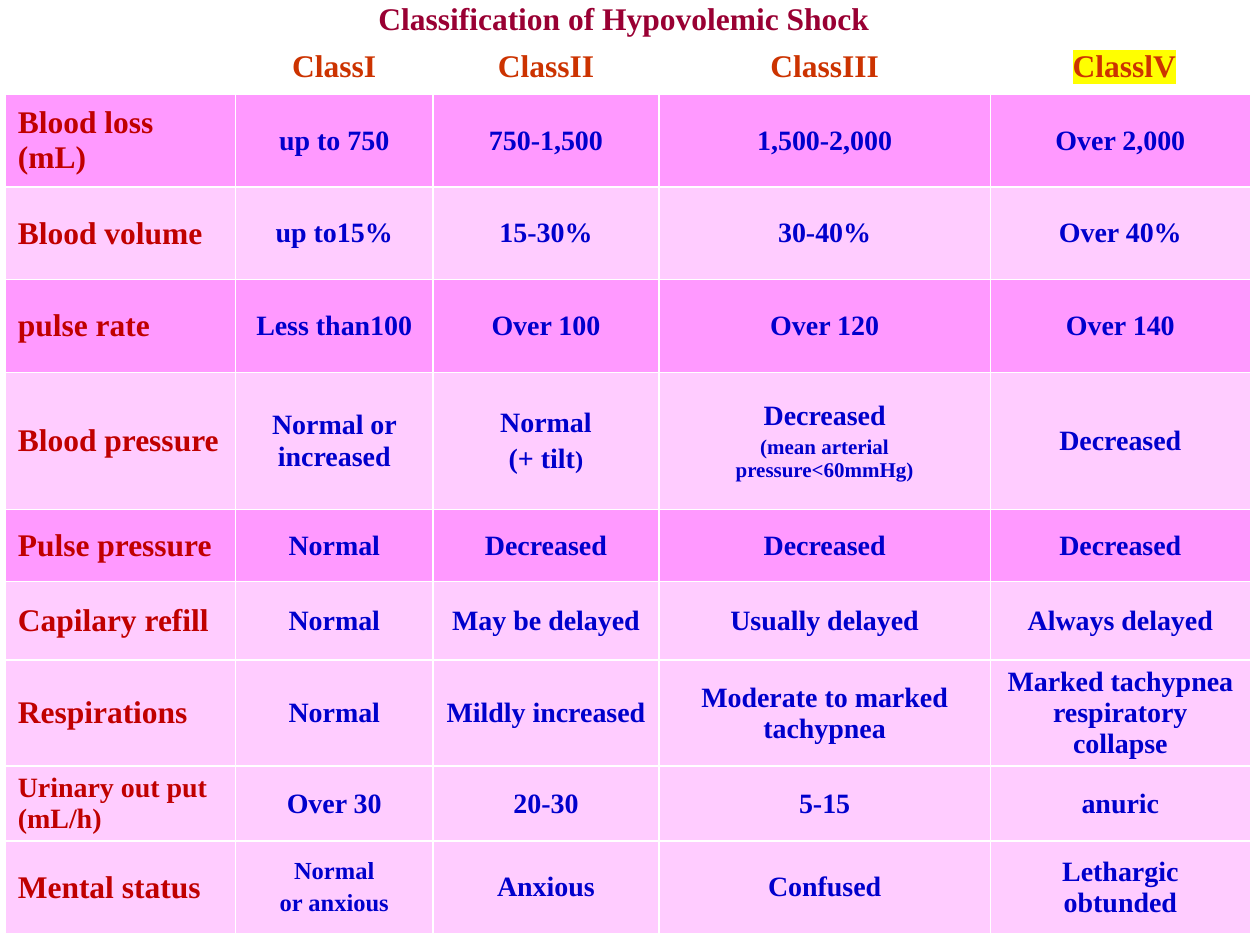
from dataclasses import dataclass

from lxml import etree
from pptx import Presentation
from pptx import util as u
from pptx.dml.color import RGBColor
from pptx.enum import text
from pptx.oxml import ns


@dataclass(frozen=True)
class Theme:
    font: str = "Times New Roman"
    title: str = "990033"
    heading: str = "CC3300"
    label: str = "C00000"
    value: str = "0000CC"
    strong: str = "FF99FF"
    soft: str = "FFCCFF"
    border: str = "FFFFFF"
    marker: str = "FFFF00"
    large: int = 18
    body: int = 16
    small: int = 14
    note: int = 12


class Sheet:
    def __init__(self, slide, theme):
        self.slide = slide
        self.theme = theme

    def table(self, left, top, widths, heights):
        frame = self.slide.shapes.add_table(
            len(heights), len(widths), u.Pt(left), u.Pt(top),
            u.Pt(sum(widths)), u.Pt(sum(heights)))
        grid = frame.table
        grid.first_row = False
        grid.horz_banding = False
        for column, width in zip(grid.columns, widths):
            column.width = u.Pt(width)
        for row, height in zip(grid.rows, heights):
            row.height = u.Pt(height)
        for cell in grid.iter_cells():
            self.border(cell)
            cell.fill.background()
        return grid

    def border(self, cell):
        properties = cell._tc.get_or_add_tcPr()
        for place, side in enumerate(("lnL", "lnR", "lnT", "lnB")):
            line = etree.Element(ns.qn(f"a:{side}"), w=str(u.Pt(1)))
            fill = etree.SubElement(line, ns.qn("a:solidFill"))
            etree.SubElement(fill, ns.qn("a:srgbClr"), val=self.theme.border)
            properties.insert(place, line)

    def shade(self, cell, color):
        cell.fill.solid()
        cell.fill.fore_color.rgb = RGBColor.from_string(color)
        cell.vertical_anchor = text.MSO_ANCHOR.MIDDLE

    def label(self, cell, content, color, size, align=text.PP_ALIGN.CENTER):
        paragraphs = [[(content, size)]] if isinstance(content, str) else content
        frame = cell.text_frame
        for index, runs in enumerate(paragraphs):
            paragraph = frame.add_paragraph() if index else frame.paragraphs[0]
            paragraph.alignment = align
            main_size = runs[0][1]
            if index:
                paragraph.space_before = u.Pt(0.2 * main_size)
            font = paragraph.font
            font.name = self.theme.font
            font.bold = True
            font.size = u.Pt(main_size)
            font.color.rgb = RGBColor.from_string(color)
            for words, run_size in runs:
                run = paragraph.add_run()
                run.text = words
                if run_size != main_size:
                    run.font.size = u.Pt(run_size)

    def highlight(self, run):
        marker = etree.SubElement(run._r.get_or_add_rPr(), ns.qn("a:highlight"))
        etree.SubElement(marker, ns.qn("a:srgbClr"), val=self.theme.marker)


def main():
    theme = Theme()
    large, body, small, note = theme.large, theme.body, theme.small, theme.note
    deck = Presentation()
    deck.slide_width, deck.slide_height = u.Pt(720), u.Pt(540)
    sheet = Sheet(deck.slides.add_slide(deck.slide_layouts[6]), theme)

    classes = [
        "ClassI",
        [[(" ", small), ("ClassII", large), (" ", small)]],
        " ClassIII ",
        [[(" ", large), ("ClasslV", large)]],
    ]
    signs = [
        ("Blood loss (mL)", theme.strong, 53,
         ["up to 750", "750-1,500", "1,500-2,000", "Over 2,000"]),
        ("Blood volume", theme.soft, 53,
         ["up to15%", "15-30%", "30-40%", "Over 40%"]),
        ("pulse rate", theme.strong, 53,
         ["Less than100", "Over 100", "Over 120", "Over 140"]),
        ("Blood pressure", theme.soft, 78.5,
         ["Normal or increased",
          [[("Normal", body)], [("(+ tilt", body), (")", small)]],
          [[("Decreased", body)], [("(mean arterial pressure<60mmHg)", note)]],
          "Decreased"]),
        ("Pulse pressure", theme.strong, 41,
         ["Normal", "Decreased", "Decreased", "Decreased"]),
        ("Capilary refill", theme.soft, 45,
         ["Normal", "May be delayed", "Usually delayed", "Always delayed"]),
        ("Respirations", theme.soft, 53,
         ["Normal", "Mildly increased", "Moderate to marked tachypnea",
          "Marked tachypnea respiratory collapse"]),
        ([[("Urinary out put (mL/h)", body)]], theme.soft, 41,
         ["Over 30", "20-30", "5-15", "anuric"]),
        ("Mental status", theme.soft, 53,
         [[[("Normal", small)], [("or anxious", small)]],
          "Anxious", "Confused", "Lethargic obtunded"]),
    ]

    heights = [25, 25] + [height for _, _, height, _ in signs]
    grid = sheet.table(3, -2.5, [131.5, 113, 129, 189.5, 148.5], heights)

    title = grid.cell(0, 0)
    title.merge(grid.cell(0, 4))
    sheet.label(title, "Classification of Hypovolemic Shock ", theme.title, large)

    for column, heading in enumerate(classes, 1):
        sheet.label(grid.cell(1, column), heading, theme.heading, large)
    sheet.highlight(grid.cell(1, 4).text_frame.paragraphs[0].runs[1])

    for row, (sign, color, _, values) in enumerate(signs, 2):
        sheet.shade(grid.cell(row, 0), color)
        sheet.label(grid.cell(row, 0), sign, theme.label, large, text.PP_ALIGN.LEFT)
        for column, value in enumerate(values, 1):
            sheet.shade(grid.cell(row, column), color)
            sheet.label(grid.cell(row, column), value, theme.value, body)

    deck.save("out.pptx")


if __name__ == "__main__":
    main()
